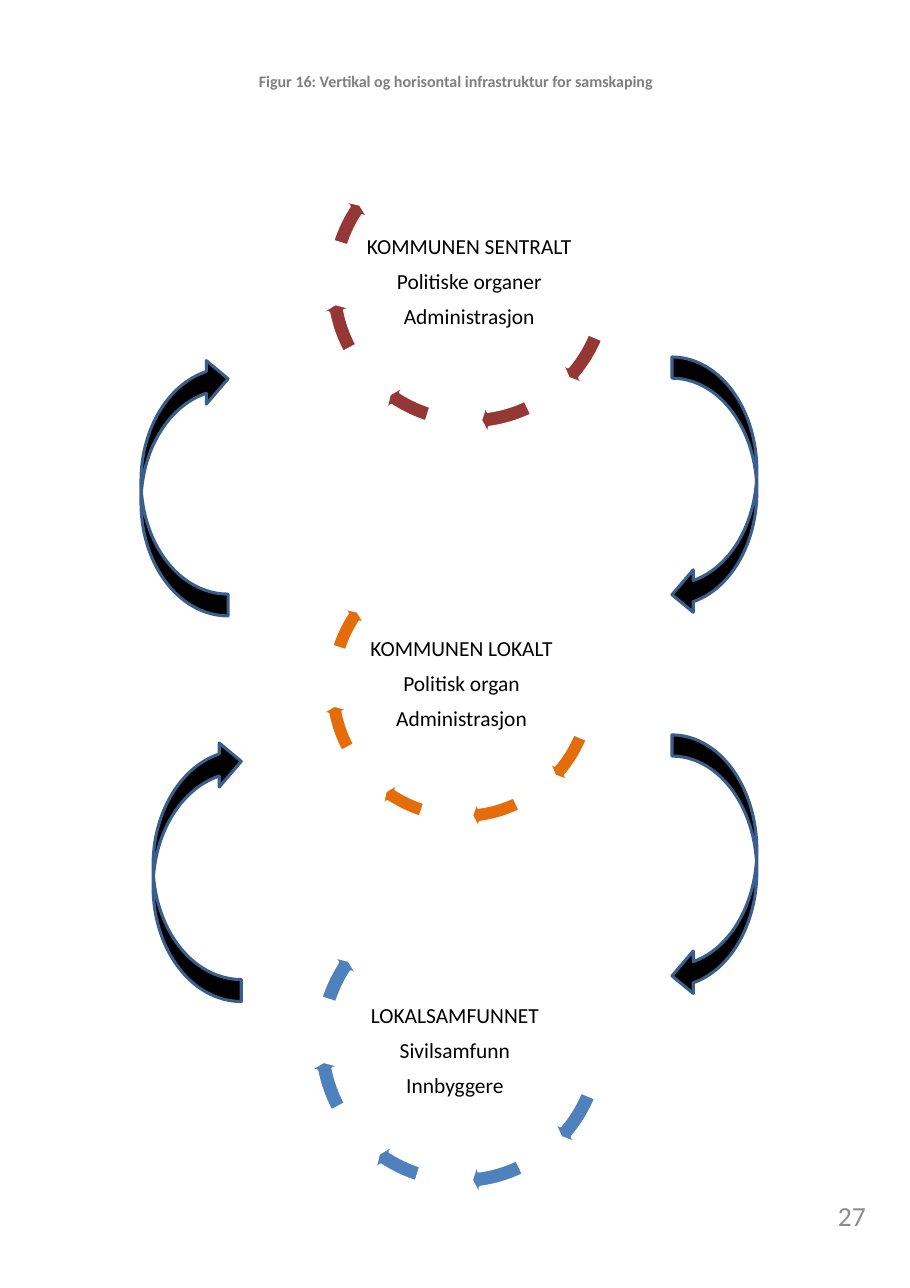
from dataclasses import dataclass

from pptx import Presentation
from pptx.dml.color import RGBColor
from pptx.enum.shapes import MSO_SHAPE as Shape
from pptx.enum.text import MSO_ANCHOR as Anchor, MSO_AUTO_SIZE as AutoSize, PP_ALIGN as Align
from pptx.util import Inches, Pt


@dataclass(frozen=True)
class Theme:
    font: str = "Calibri"
    ink: str = "000000"
    paper: str = "FFFFFF"
    caption: str = "808080"
    page: str = "8C8C8C"
    link_line: str = "3A5F8C"
    red: str = "953735"
    orange: str = "E46C0A"
    blue: str = "4F81BD"
    caption_size: float = 10.5
    label_size: float = 14
    page_size: float = 18
    outline: float = 2


T = Theme()

# Content: places are left, top, width, height in inches
CAPTION = "Figur 16: Vertikal og horisontal infrastruktur for samskaping"
PAGE = "27"
LEVELS = [
    {"ring": (2.86, 1.18, 2.81), "color": T.red, "label": (3.74, 2.07, 1.04, 0.62),
     "lines": ["KOMMUNEN SENTRALT", "Politiske organer", "Administrasjon"]},
    {"ring": (2.86, 4.91, 2.66), "color": T.orange, "label": (3.69, 5.72, 1.0, 0.67),
     "lines": ["KOMMUNEN LOKALT", "Politisk organ", "Administrasjon"]},
    {"ring": (2.75, 8.03, 2.86), "color": T.blue, "label": (3.53, 9.05, 1.2, 0.94),
     "lines": ["LOKALSAMFUNNET", "Sivilsamfunn", "Innbyggere"]},
]
LINKS = [
    (Shape.CURVED_LEFT_ARROW, (6.1, 3.24, 0.77, 2.35), 0),
    (Shape.CURVED_LEFT_ARROW, (6.1, 6.67, 0.77, 2.38), 0),
    (Shape.CURVED_DOWN_ARROW, (0.5, 4.02, 2.35, 0.79), 270),
    (Shape.CURVED_DOWN_ARROW, (0.6, 7.5, 2.38, 0.8), 270),
]

# Ring arrows: start and end in degrees, then thickness and head in shares
RING_ARCS = [(197.65, 212.95), (22.52, 40.17), (64.48, 82.13), (107.7, 123.0), (151.97, 168.68)]
HEAD_ANGLE, THICKNESS, HEAD_WIDTH = 3.35, 0.052, 0.061
DEGREE = 0.6  # one degree in adjustment units


def rgb(color):
    return RGBColor.from_string(color)


def add_shape(slide, kind, box, fill, line=None):
    s = slide.shapes.add_shape(kind, *map(Inches, box))
    s.shadow.inherit = False
    s.fill.solid()
    s.fill.fore_color.rgb = rgb(fill)
    if line:
        s.line.color.rgb = rgb(line)
        s.line.width = Pt(T.outline)
    else:
        s.line.fill.background()
    return s


def set_frame(tf, wrap, side, end, anchor=Anchor.TOP):
    tf.word_wrap = wrap
    tf.auto_size = AutoSize.NONE
    tf.vertical_anchor = anchor
    tf.margin_left = tf.margin_right = Inches(side)
    tf.margin_top = tf.margin_bottom = Inches(end)


def add_run(p, text, size, color, align, bold=False):
    p.alignment = align
    r = p.add_run()
    r.text = text
    r.font.name = T.font
    r.font.size = Pt(size)
    r.font.bold = bold
    r.font.color.rgb = rgb(color)


def add_ring(slide, left, top, size, color):
    for start, end in RING_ARCS:
        s = add_shape(slide, Shape.CIRCULAR_ARROW, (left, top, size, size), color, T.paper)
        values = (THICKNESS, HEAD_ANGLE * DEGREE, end * DEGREE, start * DEGREE, HEAD_WIDTH)
        for i, value in enumerate(values):
            s.adjustments[i] = value


def add_label(slide, box, lines):
    tf = add_shape(slide, Shape.RECTANGLE, box, T.paper).text_frame
    set_frame(tf, False, 0.06, 0.03)
    for i, line in enumerate(lines):
        p = tf.add_paragraph() if i else tf.paragraphs[0]
        p.line_spacing = 1.07
        p.space_after = Pt(5)
        add_run(p, line, T.label_size, T.ink, Align.CENTER)


def main():
    prs = Presentation()
    prs.slide_width, prs.slide_height = Inches(8.26), Inches(11.69)
    slide = prs.slides.add_slide(prs.slide_layouts[5])

    # Figure caption
    title = slide.shapes.title
    title.left, title.top, title.width, title.height = map(Inches, (2.25, 0.6, 3.86, 0.28))
    set_frame(title.text_frame, False, 0.1, 0.05)
    add_run(title.text_frame.paragraphs[0], CAPTION, T.caption_size, T.caption, Align.LEFT, True)

    # Rings first, so the labels lie on top
    for level in LEVELS:
        add_ring(slide, *level["ring"], level["color"])
    for level in LEVELS:
        add_label(slide, level["label"], level["lines"])

    # Arrows linking the levels
    for kind, box, rotation in LINKS:
        add_shape(slide, kind, box, T.ink, T.link_line).rotation = rotation

    # Page number
    tf = slide.shapes.add_textbox(*map(Inches, (5.96, 10.88, 1.9, 0.3))).text_frame
    set_frame(tf, True, 0, 0)
    add_run(tf.paragraphs[0], PAGE, T.page_size, T.page, Align.RIGHT)

    prs.save("out.pptx")


if __name__ == "__main__":
    main()
